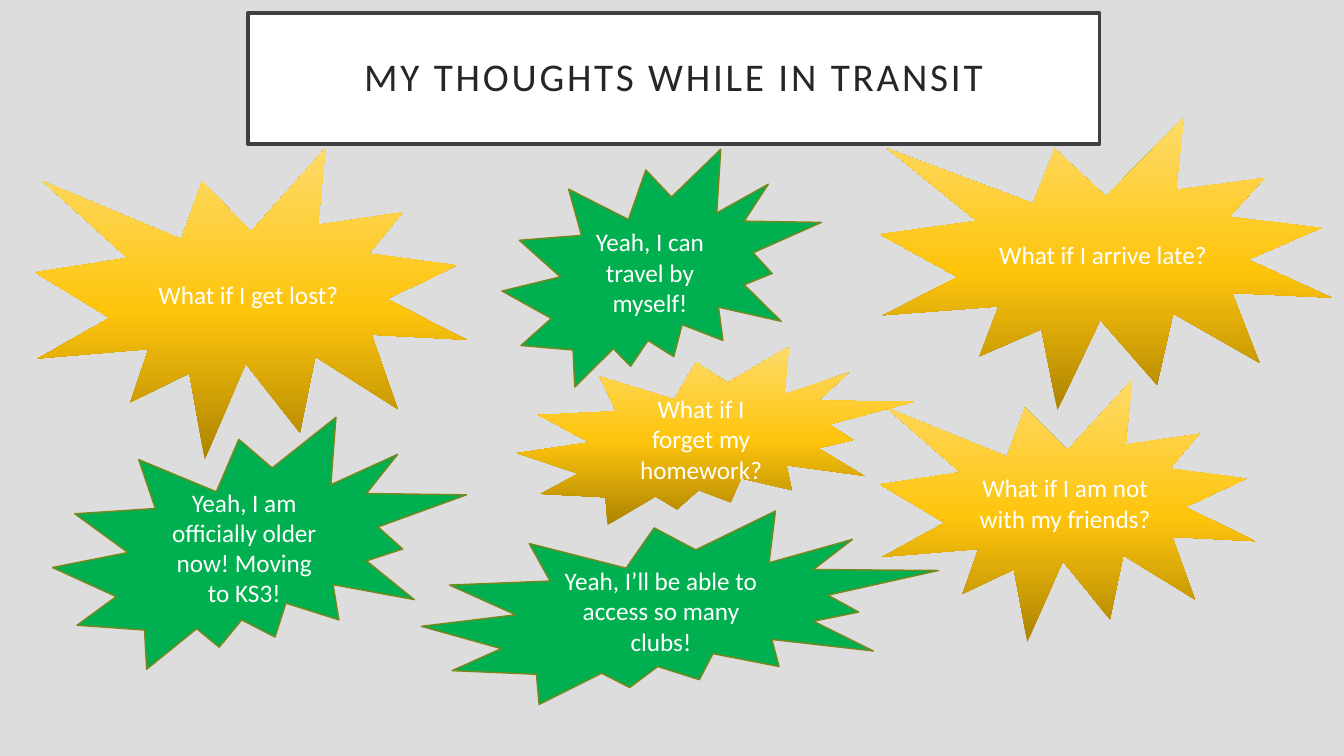
from dataclasses import dataclass

from lxml.etree import SubElement
from pptx import Presentation
from pptx.dml.color import RGBColor
from pptx.enum.shapes import MSO_SHAPE as Preset
from pptx.enum.text import MSO_ANCHOR as Anchor, PP_ALIGN as Align
from pptx.oxml.ns import qn
from pptx.shapes.autoshape import Shape
from pptx.slide import Slide
from pptx.util import Pt

COLORS = {
    "background": "DDDDDD",
    "white": "FFFFFF",
    "title_line": "404040",
    "title_text": "262626",
    "green": "00B050",
    "olive": "7B871D",
}
WORRY_GRADIENT = ((0, "AE8401"), (48, "FEC50D"), (100, "FEDB6A"))
TITLE_INSET = Pt(14.4)


@dataclass(frozen=True)
class Label:
    text: str
    left: float
    top: float
    width: float
    height: float
    preset: Preset = Preset.EXPLOSION2
    size: float = 18
    color: str = "white"


TITLE = Label("MY THOUGHTS WHILE IN TRANSIT", 177.1, 9.4, 608.4, 93.6,
              Preset.RECTANGLE, 28, "title_text")
WORRIES = (
    Label("What if I get lost?", 25.2, 105.8, 308.2, 222.5, Preset.EXPLOSION1),
    Label("What if I arrive late?", 628.6, 84.2, 322.6, 208.8, Preset.EXPLOSION1),
    Label("What if I am not with my friends?", 628.6, 271.4, 267.8, 187.2,
          Preset.EXPLOSION1),
    Label("What if I forget my homework?", 369.4, 247.7, 283.7, 127.4),
)
HOPES = (
    Label("Yeah, I can travel by myself!", 358.6, 106.6, 228.2, 169.9),
    Label("Yeah, I am officially older now! Moving to KS3!", 37.4, 298.1, 295.9, 180),
    Label("Yeah, I’ll be able to access so many clubs!", 301, 365, 369.4, 138.2),
)


def rgb(name: str) -> RGBColor:
    return RGBColor.from_string(COLORS[name])


def set_values(target: object, values: dict) -> None:
    for name, value in values.items():
        setattr(target, name, value)


def add_label(slide: Slide, label: Label) -> Shape:
    """Add the preset shape with centred text, without fill or line."""
    box = (Pt(label.left), Pt(label.top), Pt(label.width), Pt(label.height))
    shape = slide.shapes.add_shape(label.preset, *box)
    shape.shadow.inherit = False
    shape.line.fill.background()
    set_values(shape.text_frame, {"word_wrap": True, "vertical_anchor": Anchor.MIDDLE})
    paragraph = shape.text_frame.paragraphs[0]
    paragraph.alignment = Align.CENTER
    run = paragraph.add_run()
    run.text = label.text
    set_values(run.font, {"name": "Calibri", "size": Pt(label.size)})
    run.font.color.rgb = rgb(label.color)
    return shape


def paint(shape: Shape, fill: str, line: str, line_width: float) -> None:
    shape.fill.solid()
    shape.fill.fore_color.rgb = rgb(fill)
    shape.line.color.rgb = rgb(line)
    shape.line.width = Pt(line_width)


def paint_gradient(shape: Shape) -> None:
    """Fill from the bottom up with the worry colours."""
    shape.fill.gradient()
    shape.fill.gradient_angle = 90
    stops = next(shape._element.spPr.iter(qn("a:gsLst")))
    for stop in list(stops):
        stops.remove(stop)
    for percent, color in WORRY_GRADIENT:
        stop = SubElement(stops, qn("a:gs"), pos=str(percent * 1000))
        SubElement(stop, qn("a:srgbClr"), val=color)


def add_title(slide: Slide) -> None:
    shape = add_label(slide, TITLE)
    paint(shape, "white", "title_line", 2.5)
    sides = ("left", "top", "right", "bottom")
    set_values(shape.text_frame, {f"margin_{side}": TITLE_INSET for side in sides})
    paragraph = shape.text_frame.paragraphs[0]
    paragraph.line_spacing = 0.9
    paragraph.runs[0]._r.get_or_add_rPr().set("spc", "200")


def main() -> None:
    presentation = Presentation()
    set_values(presentation, {"slide_width": Pt(960), "slide_height": Pt(540)})
    slide = presentation.slides.add_slide(presentation.slide_layouts[6])
    slide.background.fill.solid()
    slide.background.fill.fore_color.rgb = rgb("background")

    add_title(slide)
    for worry in WORRIES:
        paint_gradient(add_label(slide, worry))
    for hope in HOPES:
        paint(add_label(slide, hope), "green", "olive", 1)
    presentation.save("out.pptx")


if __name__ == "__main__":
    main()
